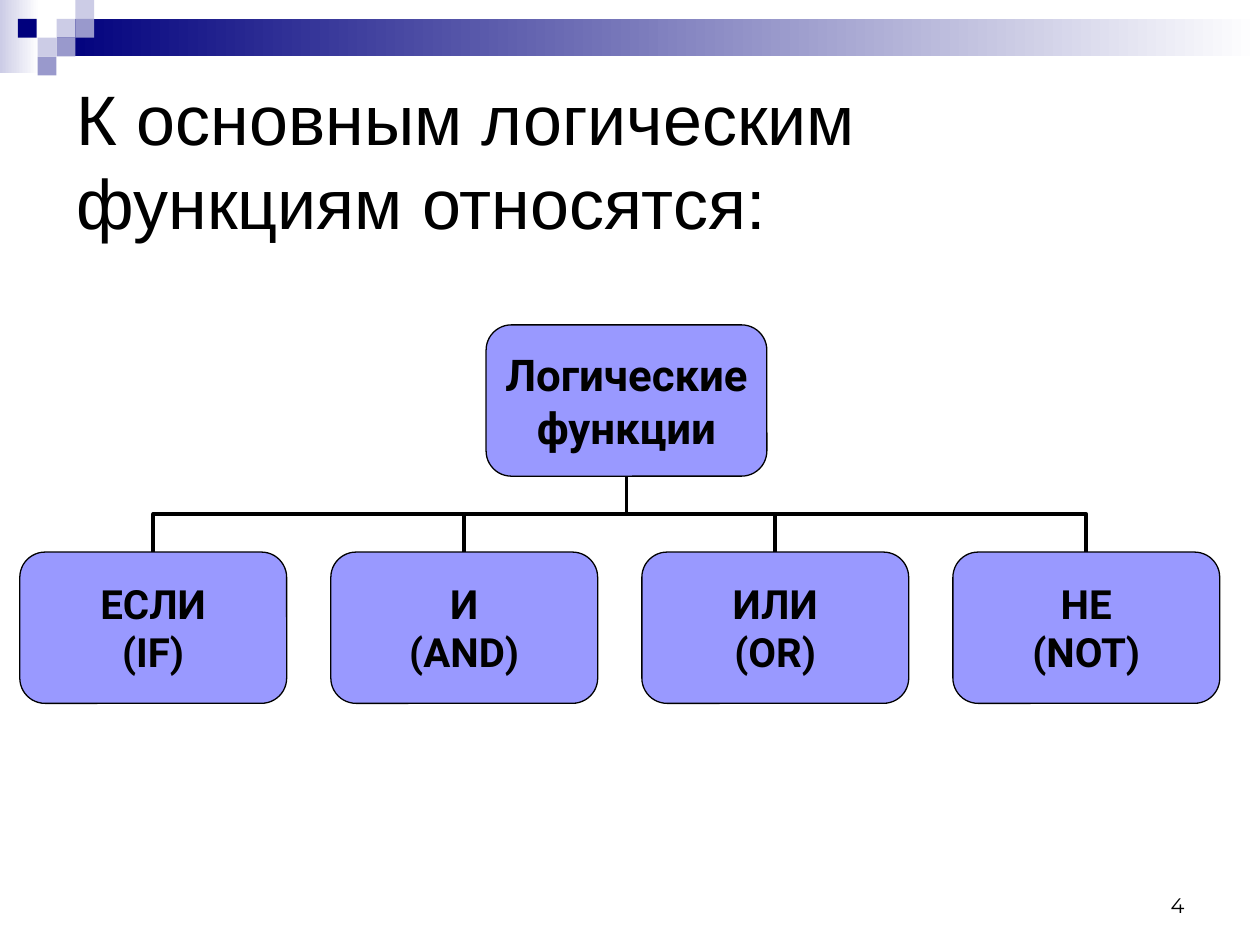
from dataclasses import dataclass

import pptx
import pptx.dml.color
import pptx.enum.shapes
import pptx.enum.text
import pptx.oxml.ns
import pptx.util
from lxml import etree

Cm, Pt = pptx.util.Cm, pptx.util.Pt
Align = pptx.enum.text.PP_ALIGN
Anchor = pptx.enum.text.MSO_ANCHOR
Kind = pptx.enum.shapes.MSO_SHAPE


@dataclass(frozen=True)
class Theme:
    navy: str = "00007D"
    mid: str = "9999CC"
    pale: str = "CCCCE6"
    white: str = "FFFFFF"
    ink: str = "000000"
    node: str = "9999FF"
    head: int = 40
    root: int = 25
    leaf: int = 23
    note: int = 12


def rgb(code):
    return pptx.dml.color.RGBColor.from_string(code)


class Deck:
    def __init__(self, theme):
        self.theme = theme
        self.file = pptx.Presentation()
        self.file.slide_width, self.file.slide_height = Cm(25.4), Cm(19.05)
        self.slide = self.file.slides.add_slide(self.file.slide_layouts[6])
        self.shapes = self.slide.shapes

    def shape(self, kind, x, y, w, h):
        item = self.shapes.add_shape(kind, Cm(x), Cm(y), Cm(w), Cm(h))
        item.shadow.inherit = False
        return item

    def block(self, x, y, w, h, color):
        item = self.shape(Kind.RECTANGLE, x, y, w, h)
        item.fill.solid()
        item.fill.fore_color.rgb = rgb(color)
        item.line.fill.background()

    def fade(self, x, y, w, h, color):
        """Add a bar that runs from color to white, left to right."""
        item = self.shape(Kind.RECTANGLE, x, y, w, h)
        item.fill.gradient()
        item.fill.gradient_angle = 0
        stops = item.fill.gradient_stops
        for stop, code, pos in zip(stops, (color, self.theme.white), (0, 1)):
            stop.color.rgb = rgb(code)
            stop.position = pos
        item.line.fill.background()

    def words(self, frame, text, font, size, align, anchor, bold=False):
        frame.text = text
        frame.vertical_anchor = anchor
        for para in frame.paragraphs:
            para.alignment = align
            for run in para.runs:
                run.font.name, run.font.size = font, Pt(size)
                run.font.bold = bold
                run.font.color.rgb = rgb(self.theme.ink)

    def label(self, x, y, w, h, text, font, size, align, anchor):
        box = self.shapes.add_textbox(Cm(x), Cm(y), Cm(w), Cm(h))
        box.text_frame.word_wrap = True
        self.words(box.text_frame, text, font, size, align, anchor)

    def node(self, x, y, w, h, text, size):
        item = self.shape(Kind.ROUNDED_RECTANGLE, x, y, w, h)
        item.adjustments[0] = 0.167
        item.fill.solid()
        item.fill.fore_color.rgb = rgb(self.theme.node)
        item.line.color.rgb = rgb(self.theme.ink)
        item.line.width = Pt(0.75)
        frame = item.text_frame
        frame.margin_left = frame.margin_right = 0
        frame.margin_top = frame.margin_bottom = 0
        frame.word_wrap = False
        self.words(frame, text, "Roboto", size, Align.CENTER, Anchor.MIDDLE, True)

    def branch(self, x1, y1, x2, y2):
        """Add an elbow that leaves and arrives vertically: a level one turned by 90 degrees."""
        mx, my = (x1 + x2) / 2, (y1 + y2) / 2
        dx, dy = (x1 - x2) / 2, (y2 - y1) / 2
        line = self.shapes.add_connector(
            pptx.enum.shapes.MSO_CONNECTOR.ELBOW,
            Cm(mx - dy), Cm(my - dx), Cm(mx + dy), Cm(my + dx))
        line.line.color.rgb = rgb(self.theme.ink)
        line.line.width = Pt(2.25)
        props = line._element.spPr
        props.xfrm.set("rot", str(90 * 60000))
        etree.SubElement(props, pptx.oxml.ns.qn("a:effectLst"))


def banner(deck):
    look, unit = deck.theme, 0.38
    deck.fade(0, 0, 0.79, 1.47, look.pale)
    deck.fade(3 * unit, unit, 25.4 - 3 * unit, 0.76, look.navy)
    tiles = [(3, 1, look.pale), (4, 0, look.pale), (4, 1, look.mid),
             (2, 2, look.pale), (3, 2, look.mid), (2, 3, look.mid)]
    for col, row, color in tiles:
        deck.block(col * unit, row * unit, unit, unit, color)
    deck.block(0.36, unit, unit, unit, look.navy)


def tree(deck):
    look = deck.theme
    left, step, wide, tall = 0.4, 6.27, 5.38, 3.05
    top, low = 6.55, 11.13
    rootx, rootw = 9.8, 5.66
    leaves = ["ЕСЛИ\n(IF)", "И\n(AND)", "ИЛИ\n(OR)", "НЕ\n(NOT)"]
    spots = [left + i * step for i in range(len(leaves))]
    for x in spots:
        deck.branch(rootx + rootw / 2, top + tall, x + wide / 2, low)
    deck.node(rootx, top, rootw, tall, "Логические\nфункции", look.root)
    for x, text in zip(spots, leaves):
        deck.node(x, low, wide, tall, text, look.leaf)


def main():
    look = Theme()
    deck = Deck(look)
    banner(deck)
    tree(deck)
    deck.label(1.3, 1.32, 22.86, 3.81, "К основным логическим функциям относятся:",
               "Arial", look.head, Align.LEFT, Anchor.MIDDLE)
    deck.label(18.21, 17.35, 5.92, 1.27, "4",
               "Montserrat", look.note, Align.RIGHT, Anchor.BOTTOM)
    deck.file.save("out.pptx")


if __name__ == "__main__":
    main()
